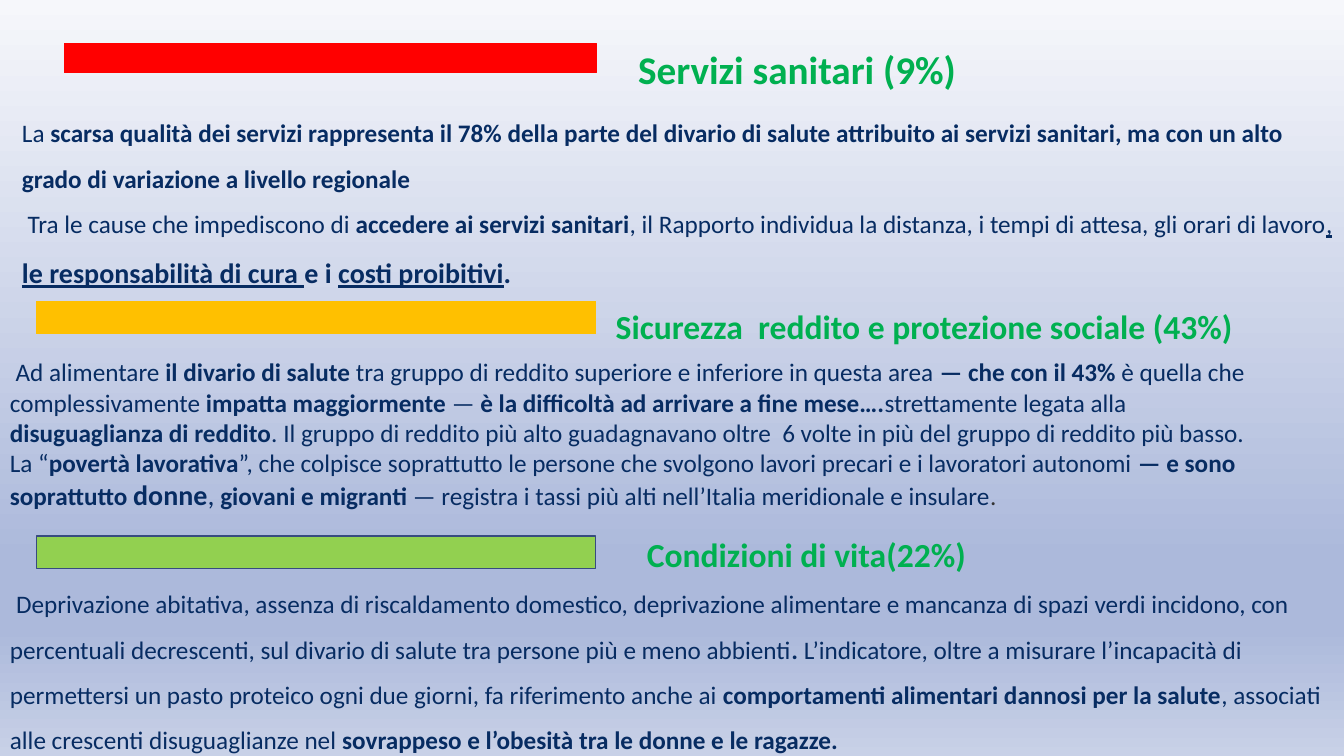
from copy import deepcopy
from pptx import Presentation
from pptx import util as u
from pptx.dml.color import RGBColor
from pptx.enum import shapes, text

NAVY, GREEN = "072C62", "00B050"
PLAIN, BOLD, UNDER = {}, {"bold": True}, {"underline": True}
BIG = {"bold": True, "size": 20}
BIG_UNDER = {**BIG, **UNDER}


def rgb(code):
    return RGBColor.from_string(code)


def write(box, paras, base, gap):
    """Fill a box with paragraphs, each a list of (words, format) runs."""
    frame = box.text_frame
    frame.word_wrap = True
    frame.auto_size = text.MSO_AUTO_SIZE.SHAPE_TO_FIT_TEXT
    frame.vertical_anchor = text.MSO_ANCHOR.TOP
    for i, runs in enumerate(paras):
        para = frame.add_paragraph() if i else frame.paragraphs[0]
        para.alignment = text.PP_ALIGN.LEFT
        para.line_spacing = gap
        for words, extra in runs:
            run = para.add_run()
            run.text = words
            form = {"name": "Calibri", "bold": False, **base, **extra}
            run.font.color.rgb = rgb(form.pop("color"))
            run.font.size = u.Pt(form.pop("size"))
            for key, value in form.items():
                setattr(run.font, key, value)


deck = Presentation()
deck.slide_width, deck.slide_height = u.Pt(960), u.Pt(540)
slide = deck.slides.add_slide(deck.slide_layouts[5])

# Background gradient, top to bottom
fill = slide.background.fill
fill.gradient()
fill.gradient_angle = 270
stops = slide.element.xpath(".//a:gsLst")[0]
for stop in list(stops):
    stops.append(deepcopy(stop))
shades = [(0, "F6F7FB"), (0.74, "ACB9DB"), (0.83, "ACB9DB"), (1, "C8D1E7")]
for stop, (place, code) in zip(fill.gradient_stops, shades):
    stop.position = place
    stop.color.rgb = rgb(code)

# Coloured bars: box, fill, line
bars = [
    ((46, 31, 380, 21), "FF0000", "FF0000"),
    ((26, 215.3, 399.6, 23), "FFC000", "FFC000"),
    ((26, 383, 399.6, 23), "92D050", "374B7F"),
]
for area, inner, edge in bars:
    bar = slide.shapes.add_shape(shapes.MSO_SHAPE.RECTANGLE, *map(u.Pt, area))
    bar.shadow.inherit = False
    bar.fill.solid()
    bar.fill.fore_color.rgb = rgb(inner)
    bar.line.color.rgb = rgb(edge)
    bar.line.width = u.Pt(1)

# Headings: the first one is the slide title
heads = [
    ((448.6, 28.8, 432, 41), "Servizi sanitari (9%)", 28),
    ((432.7, 215.3, 516, 36), "Sicurezza  reddito e protezione sociale (43%)", 24),
    ((455, 378, 407, 36), "Condizioni di vita(22%)", 24),
]
for i, (area, words, size) in enumerate(heads):
    spots = [u.Pt(n) for n in area]
    if i:
        head = slide.shapes.add_textbox(*spots)
    else:
        head = slide.shapes.title
        head.left, head.top, head.width, head.height = spots
    write(head, [[(words, BOLD)]], {"size": size, "color": GREEN}, 1)

# Body texts
care = [
    [
        ("La ", PLAIN),
        ("scarsa qualità dei servizi rappresenta il 78% della parte del divario di salute "
         "attribuito ai servizi sanitari, ma con un alto grado di variazione a livello "
         "regionale", BOLD),
    ],
    [
        (" Tra le cause che impediscono di ", PLAIN),
        ("accedere ai servizi sanitari", BOLD),
        (", il Rapporto individua la distanza, i tempi di attesa, gli orari di lavoro", PLAIN),
        (", ", UNDER),
        ("le responsabilità di cura ", BIG_UNDER),
        ("e i ", BIG),
        ("costi proibitivi", BIG_UNDER),
        (".", BIG),
    ],
]
income = [[
    (" ", BOLD),
    ("Ad alimentare ", PLAIN),
    ("il divario di salute ", BOLD),
    ("tra gruppo di reddito superiore e inferiore in questa area ", PLAIN),
    ("— che con il 43% ", BOLD),
    ("è quella che complessivamente ", PLAIN),
    ("impatta maggiormente ", BOLD),
    ("— ", PLAIN),
    ("è la difficoltà ad arrivare a fine mese….", BOLD),
    ("strettamente legata alla ", PLAIN),
    ("disuguaglianza di reddito", BOLD),
    (". Il gruppo di reddito più alto guadagnavano oltre  6 volte in più del gruppo di "
     "reddito più basso. La “", PLAIN),
    ("povertà lavorativa", BOLD),
    ("”, che colpisce soprattutto le persone che svolgono lavori precari e i lavoratori "
     "autonomi ", PLAIN),
    ("— e sono soprattutto ", BOLD),
    ("donne", BIG),
    (",", {"size": 20}),
    (" ", PLAIN),
    ("giovani e migranti ", BOLD),
    ("— registra i tassi più alti nell’Italia meridionale e insulare", PLAIN),
    (".", {"color": "333333"}),
]]
living = [[
    (" ", {"bold": True, "name": "Roboto"}),
    ("Deprivazione abitativa, assenza di riscaldamento domestico, deprivazione alimentare e "
     "mancanza di spazi verdi incidono, con percentuali decrescenti, sul divario di salute "
     "tra persone più e meno abbienti", PLAIN),
    (". ", BOLD),
    ("L’indicatore, oltre a misurare l’incapacità di permettersi un pasto proteico ogni due "
     "giorni, fa riferimento anche ai ", PLAIN),
    ("comportamenti alimentari dannosi per la salute", BOLD),
    (", associati alle crescenti disuguaglianze nel ", PLAIN),
    ("sovrappeso e l’obesità tra le donne e le ragazze.", BOLD),
]]
bodies = [
    ((8.6, 69.8, 951.8, 138), care, 1.5),
    ((0, 251.3, 897, 119), income, 1),
    ((0, 406, 960, 134.6), living, 1.5),
]
for area, paras, gap in bodies:
    body = slide.shapes.add_textbox(*map(u.Pt, area))
    write(body, paras, {"size": 18, "color": NAVY}, gap)

deck.save("out.pptx")
